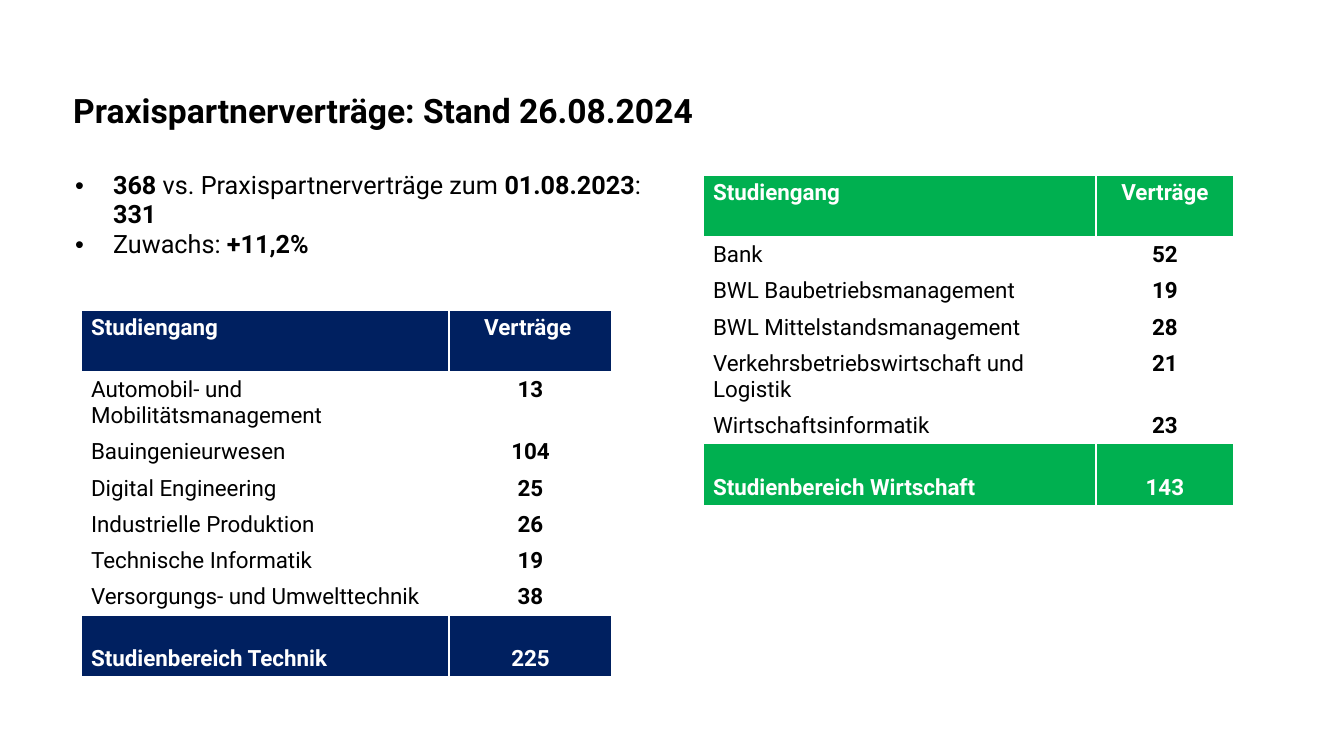
"""Build the slide on partner contracts with one table per study area."""
from lxml import etree
from pptx import Presentation
from pptx.dml.color import RGBColor
from pptx.enum.text import MSO_ANCHOR, MSO_AUTO_SIZE, PP_ALIGN
from pptx.oxml.ns import qn
from pptx.util import Pt

TOP, BOTTOM = MSO_ANCHOR.TOP, MSO_ANCHOR.BOTTOM
LEFT, CENTER = PP_ALIGN.LEFT, PP_ALIGN.CENTER
NO_FIT = MSO_AUTO_SIZE.NONE

BLACK = RGBColor(0x00, 0x00, 0x00)
WHITE = RGBColor(0xFF, 0xFF, 0xFF)
NAVY = RGBColor(0x00, 0x20, 0x60)
GREEN = RGBColor(0x00, 0xB0, 0x50)

WIDTH, HEIGHT = 1344, 756
SCALE = 12192000 / WIDTH
BAND, LINE, DOUBLE = 62, 36, 62
LONG = 33
INDENT = 38

TITLE = "Praxispartnerverträge: Stand 26.08.2024"
TITLE_BOX = (63, 85, 669, 48)
BULLETS = [
    [("368 ", True), ("vs. Praxispartnerverträge zum ", False),
     ("01.08.2023", True), (": ", False), ("331", True)],
    [("Zuwachs: ", False), ("+11,2%", True)],
]
FACTS = {"at": (65, 166), "cols": (617,), "sizes": (71,)}
TABLES = [
    {"at": (81, 310), "cols": (368, 163), "color": NAVY, "rows": [
        ("Studiengang", "Verträge "),
        ("Automobil- und Mobilitätsmanagement", 13),
        ("Bauingenieurwesen", 104),
        ("Digital Engineering", 25),
        ("Industrielle Produktion", 26),
        ("Technische Informatik", 19),
        ("Versorgungs- und Umwelttechnik", 38),
        ("Studienbereich Technik", 225)]},
    {"at": (703, 175), "cols": (393, 138), "color": GREEN, "rows": [
        ("Studiengang", "Verträge"),
        ("Bank", 52),
        ("BWL Baubetriebsmanagement", 19),
        ("BWL Mittelstandsmanagement", 28),
        ("Verkehrsbetriebswirtschaft und Logistik", 21),
        ("Wirtschaftsinformatik", 23),
        ("Studienbereich Wirtschaft", 143)]},
]


def px(n):
    return round(n * SCALE)


def apply(item, **values):
    for name, value in values.items():
        setattr(item, name, value)


def style(font, size, bold, color=BLACK):
    apply(font, name="Roboto", size=Pt(size), bold=bold)
    font.color.rgb = color


def add_title(slide):
    title = slide.shapes.title
    sides = ("left", "top", "width", "height")
    apply(title, **dict(zip(sides, map(px, TITLE_BOX))))
    frame = title.text_frame
    apply(frame, text=TITLE, word_wrap=True, auto_size=NO_FIT,
          vertical_anchor=TOP)
    para = frame.paragraphs[0]
    para.alignment = LEFT
    style(para.runs[0].font, 24, True)


def add_grid(slide, at, cols, sizes):
    box = (*at, sum(cols), sum(sizes))
    grid = slide.shapes.add_table(len(sizes), len(cols), *map(px, box)).table
    grid.horz_banding = False
    for col, width in zip(grid.columns, cols):
        col.width = px(width)
    for row, size in zip(grid.rows, sizes):
        row.height = px(size)
    return grid


def add_dot(para):
    props = para._p.get_or_add_pPr()
    props.set("marL", str(px(INDENT)))
    props.set("indent", str(px(-INDENT)))
    etree.SubElement(props, qn("a:buFont")).set("typeface", "Arial")
    etree.SubElement(props, qn("a:buChar")).set("char", "•")


def add_facts(slide):
    cell = add_grid(slide, **FACTS).cell(0, 0)
    cell.fill.solid()
    cell.fill.fore_color.rgb = WHITE
    frame = cell.text_frame
    for i, parts in enumerate(BULLETS):
        para = frame.add_paragraph() if i else frame.paragraphs[0]
        add_dot(para)
        for text, bold in parts:
            run = para.add_run()
            run.text = text
            style(run.font, 18, bold)


def add_area(slide, at, cols, color, rows):
    last = len(rows) - 1
    sizes = [BAND if i in (0, last) else
             DOUBLE if len(row[0]) > LONG else LINE
             for i, row in enumerate(rows)]
    grid = add_grid(slide, at, cols, sizes)
    for i, row in enumerate(rows):
        band = i in (0, last)
        for j, value in enumerate(row):
            cell = grid.cell(i, j)
            if band:
                cell.fill.solid()
                cell.fill.fore_color.rgb = color
            else:
                cell.fill.background()
            cell.vertical_anchor = BOTTOM if i == last else TOP
            cell.text = str(value)
            para = cell.text_frame.paragraphs[0]
            para.alignment = CENTER if j else LEFT
            style(para.runs[0].font, 16, band or j == 1,
                  WHITE if band else BLACK)


def main():
    deck = Presentation()
    apply(deck, slide_width=px(WIDTH), slide_height=px(HEIGHT))
    slide = deck.slides.add_slide(deck.slide_layouts[5])
    add_title(slide)
    add_facts(slide)
    for data in TABLES:
        add_area(slide, **data)
    deck.save("out.pptx")


if __name__ == "__main__":
    main()
